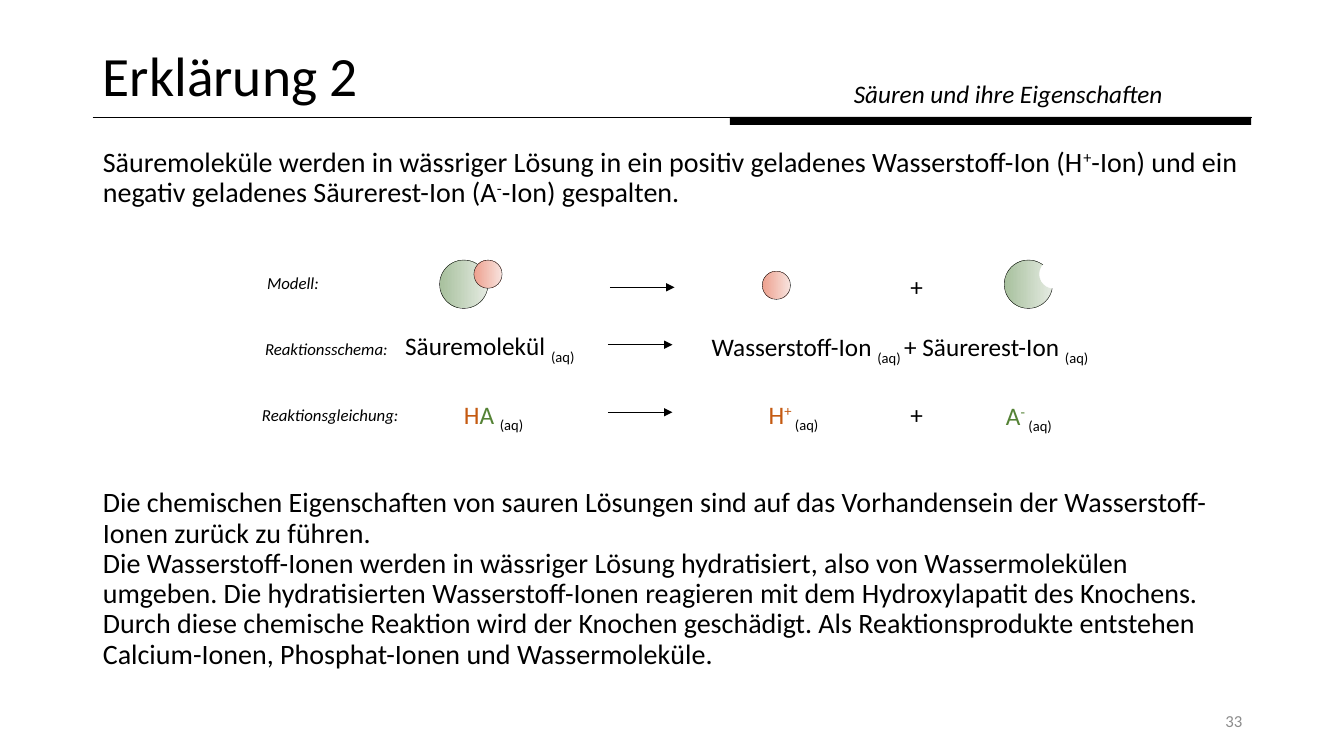
import pptx
import pptx.dml.color
import pptx.enum.shapes
import pptx.enum.text
import pptx.oxml.ns
import pptx.util
from lxml import etree

RGBColor = pptx.dml.color.RGBColor
ALIGN = pptx.enum.text.PP_ALIGN
ANCHOR = pptx.enum.text.MSO_ANCHOR
SHAPE = pptx.enum.shapes.MSO_SHAPE

BLACK = RGBColor(0x00, 0x00, 0x00)
WHITE = RGBColor(0xFF, 0xFF, 0xFF)
GREY = RGBColor(0x8C, 0x8C, 0x8C)
ORANGE = RGBColor(0xC5, 0x5A, 0x11)
GREEN = RGBColor(0x54, 0x82, 0x35)
ACID_FILL = (RGBColor(0xA7, 0xC0, 0x9D), RGBColor(0xE5, 0xEB, 0xE2))
HYDROGEN_FILL = (RGBColor(0xED, 0xA0, 0x8E), RGBColor(0xF8, 0xE3, 0xDE))
GAP_FILL = (WHITE, WHITE)

FONT = "Calibri"
EMU_PER_PX = 9144
SUPER, SUB = 30000, -25000
ACID_SIZE, HYDROGEN_SIZE = 48, 28
AQUEOUS = ("(aq)", BLACK, SUB)


def px(length):
    return pptx.util.Emu(length * EMU_PER_PX)


def add_runs(para, runs, size, italic=False):
    for text, color, baseline in runs:
        span = para.add_run()
        span.text = text
        span.font.name = FONT
        span.font.size = pptx.util.Pt(size)
        span.font.italic = italic
        span.font.color.rgb = color
        if baseline:
            span.font._element.set("baseline", str(baseline))


def add_text(page, left, top, width, height, runs, size=18, align=ALIGN.LEFT,
             italic=False, anchor=ANCHOR.TOP):
    box = page.shapes.add_textbox(px(left), px(top), px(width), px(height))
    box.text_frame.word_wrap = True
    box.text_frame.vertical_anchor = anchor
    para = box.text_frame.paragraphs[0]
    para.alignment = align
    add_runs(para, runs, size, italic)


def add_line(page, left, top, right, arrow=False):
    line = page.shapes.add_connector(
        pptx.enum.shapes.MSO_CONNECTOR.STRAIGHT, px(left), px(top), px(right), px(top))
    line.line.color.rgb = BLACK
    line.line.width = pptx.util.Pt(0.5)
    if arrow:
        tail = etree.SubElement(line.line._get_or_add_ln(), pptx.oxml.ns.qn("a:tailEnd"))
        tail.set("type", "triangle")
    etree.SubElement(line._element.spPr, pptx.oxml.ns.qn("a:effectLst"))


def add_particle(page, left, top, size, colors):
    particle = page.shapes.add_shape(SHAPE.OVAL, px(left), px(top), px(size), px(size))
    particle.shadow.inherit = False
    particle.line.width = pptx.util.Pt(0.25)
    if colors == GAP_FILL:
        particle.fill.solid()
        particle.fill.fore_color.rgb = WHITE
        particle.line.color.rgb = WHITE
        return
    particle.fill.gradient()
    particle.fill.gradient_angle = 0
    for stop, color in zip(particle.fill.gradient_stops, colors):
        stop.color.rgb = color
    particle.line.color.rgb = BLACK


def place(holder, left, top, width, height, anchor):
    holder.left, holder.top = px(left), px(top)
    holder.width, holder.height = px(width), px(height)
    frame = holder.text_frame
    frame.word_wrap = True
    frame.auto_size = pptx.enum.text.MSO_AUTO_SIZE.NONE
    frame.vertical_anchor = anchor
    return frame


def format_para(para, before=0):
    properties = para._p.get_or_add_pPr()
    properties.set("marL", "0")
    properties.set("indent", "0")
    etree.SubElement(properties, pptx.oxml.ns.qn("a:buNone"))
    para.alignment = ALIGN.LEFT
    para.line_spacing = 0.9
    para.space_before = pptx.util.Pt(before)


def add_header(page):
    add_line(page, 92, 116, 1242)
    bar = page.shapes.add_shape(SHAPE.RECTANGLE, px(724), px(116), px(517), px(8))
    bar.shadow.inherit = False
    bar.fill.solid()
    bar.fill.fore_color.rgb = BLACK
    bar.line.fill.background()
    title = place(page.shapes.title, 92, 40, 1150, 76, ANCHOR.MIDDLE).paragraphs[0]
    format_para(title)
    add_runs(title, [("Erklärung 2", BLACK, 0)], 39.6)
    add_text(page, 837, 73, 438, 40, [("Säuren und ihre Eigenschaften", BLACK, 0)],
             italic=True)


def add_body(page):
    frame = place(page.placeholders[1], 92, 142, 1150, 533, ANCHOR.TOP)
    splitting = frame.paragraphs[0]
    format_para(splitting)
    add_runs(splitting, [
        ("Säuremoleküle werden in wässriger Lösung in ein positiv geladenes "
         "Wasserstoff-Ion (H", BLACK, 0),
        ("+", BLACK, SUPER),
        ("-Ion) und ein negativ geladenes Säurerest-Ion (A", BLACK, 0),
        ("-", BLACK, SUPER),
        ("-Ion) gespalten.", BLACK, 0)], 20)
    effect = frame.add_paragraph()
    format_para(effect, 200)
    add_runs(effect, [
        ("Die chemischen Eigenschaften von sauren Lösungen sind auf das Vorhandensein "
         "der Wasserstoff-Ionen zurück zu führen. ", BLACK, 0)], 20)
    effect.add_line_break()
    add_runs(effect, [
        ("Die Wasserstoff-Ionen werden in wässriger Lösung hydratisiert, also von "
         "Wassermolekülen umgeben. Die hydratisierten Wasserstoff-Ionen reagieren mit "
         "dem Hydroxylapatit des Knochens. Durch diese chemische Reaktion wird der "
         "Knochen geschädigt. Als Reaktionsprodukte entstehen Calcium-Ionen, "
         "Phosphat-Ionen und Wassermoleküle.", BLACK, 0)], 20)


def add_reaction(page):
    for label, left, top in (("Modell:", 255, 266), ("Reaktionsschema:", 253, 331),
                             ("Reaktionsgleichung:", 250, 397)):
        add_text(page, left, top, 162, 30, [(label, BLACK, 0)], 12, italic=True)
    for left, top in ((605, 285), (603, 342), (603, 409)):
        add_line(page, left, top, left + 64, arrow=True)
    for top in (264, 391):
        add_text(page, 893, top, 31, 40, [("+", BLACK, 0)])

    for left, top, size, colors in (
            (436, 258, ACID_SIZE, ACID_FILL), (470, 258, HYDROGEN_SIZE, HYDROGEN_FILL),
            (756, 269, HYDROGEN_SIZE, HYDROGEN_FILL),
            (996, 258, ACID_SIZE, ACID_FILL), (1031, 258, HYDROGEN_SIZE, GAP_FILL)):
        add_particle(page, left, top, size, colors)

    add_text(page, 392, 323, 195, 40, [("Säuremolekül ", BLACK, 0), AQUEOUS])
    add_text(page, 696, 324, 455, 40, [
        ("Wasserstoff-Ion ", BLACK, 0), ("(aq) ", BLACK, SUB),
        ("+ Säurerest-Ion ", BLACK, 0), AQUEOUS])
    for left, top, width, formula in (
            (392, 391, 195, [("H", ORANGE, 0), ("A ", GREEN, 0)]),
            (682, 391, 210, [("H", ORANGE, 0), ("+ ", ORANGE, SUPER)]),
            (923, 392, 195, [("A", GREEN, 0), ("- ", GREEN, SUPER)])):
        add_text(page, left, top, width, 40, formula + [AQUEOUS], align=ALIGN.CENTER)


def main():
    deck = pptx.Presentation()
    deck.slide_width, deck.slide_height = px(1333), px(750)
    page = deck.slides.add_slide(deck.slide_layouts[1])
    add_header(page)
    add_body(page)
    add_reaction(page)
    add_text(page, 942, 695, 300, 40, [("33", GREY, 0)], 12, ALIGN.RIGHT,
             anchor=ANCHOR.MIDDLE)
    deck.save("out.pptx")


if __name__ == "__main__":
    main()
